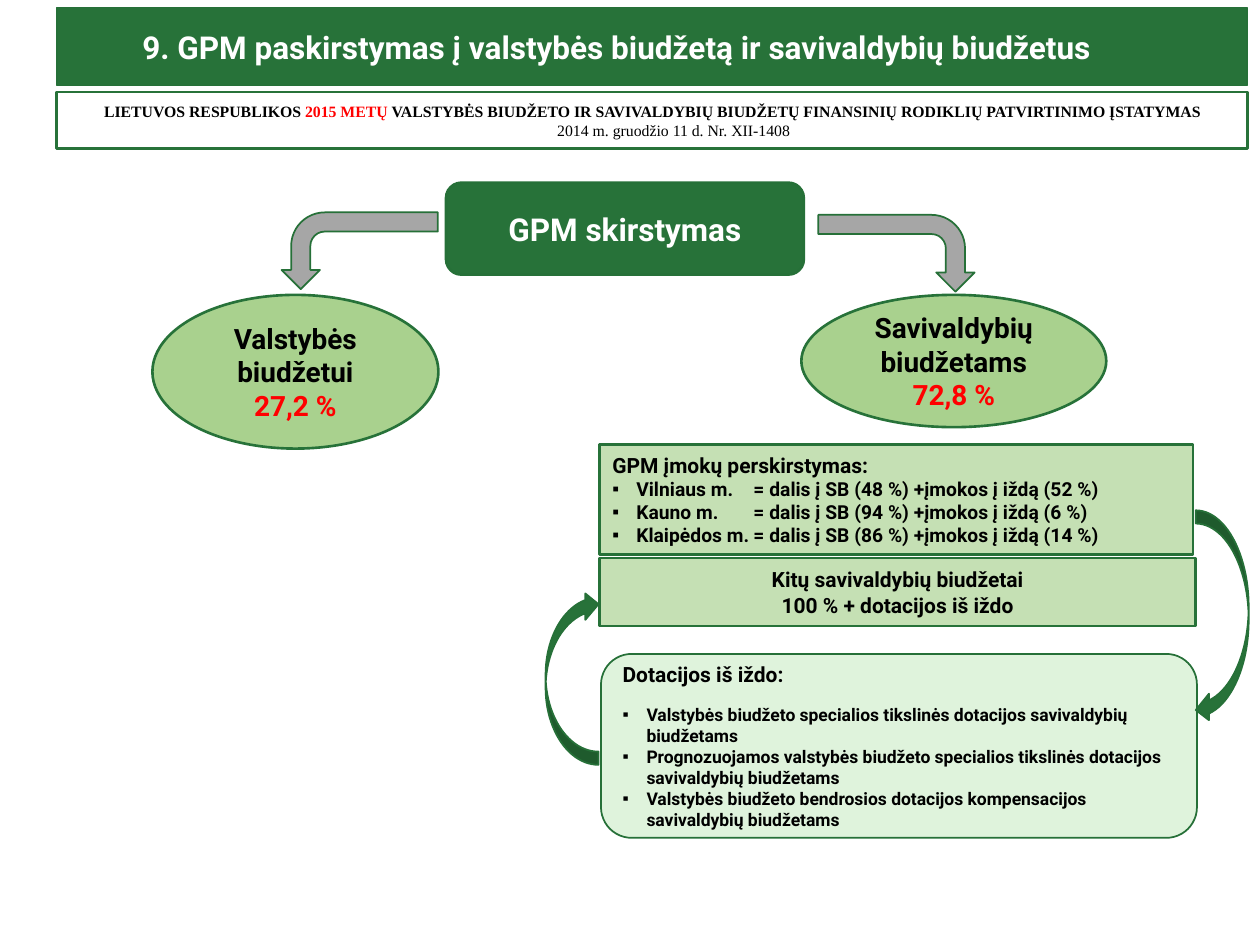
from dataclasses import dataclass
from typing import Optional

from lxml.etree import SubElement
from pptx import Presentation
from pptx.dml.color import RGBColor
from pptx.enum.shapes import MSO_SHAPE as Preset
from pptx.enum.text import MSO_ANCHOR as Anchor, MSO_AUTO_SIZE as AutoSize, PP_ALIGN as Align
from pptx.oxml.ns import qn
from pptx.util import Inches, Pt

# Grid: 100 columns by 75 rows
COLUMNS, ROWS = 100, 75
CELL = Inches(0.1)

GREEN = RGBColor(0x27, 0x72, 0x39)
EDGE = RGBColor(0x26, 0x70, 0x38)
LEAF = RGBColor(0xA9, 0xD1, 0x8E)
PALE = RGBColor(0xC5, 0xE0, 0xB4)
MINT = RGBColor(0xDF, 0xF3, 0xDC)
GREY = RGBColor(0xA6, 0xA6, 0xA6)
RED = RGBColor(0xFF, 0x00, 0x00)
BLACK = RGBColor(0x00, 0x00, 0x00)
WHITE = RGBColor(0xFF, 0xFF, 0xFF)
INDENT = Inches(0.19)


@dataclass
class Span:
    text: str
    size: float
    color: RGBColor = BLACK
    bold: bool = True
    font: str = "Roboto"


@dataclass
class Para:
    spans: list[Span]
    align: Align = Align.CENTER
    bullet: bool = False
    left: float = 0  # inches
    after: float = 0  # points
    tab: Optional[float] = None  # inches


@dataclass
class Area:
    column: float
    row: float
    columns: float
    rows: float

    def lengths(self) -> list[int]:
        return [round(n * CELL) for n in (self.column, self.row, self.columns, self.rows)]


@dataclass
class Look:
    fill: RGBColor
    line: RGBColor = GREEN
    width: float = 1.5


@dataclass
class Arrow:
    preset: Preset
    area: Area
    fill: RGBColor
    rotation: int = 0
    flipped: bool = False


def paint(shape, look: Look) -> None:
    shape.fill.solid()
    shape.fill.fore_color.rgb = look.fill
    shape.line.color.rgb = look.line
    shape.line.width = Pt(look.width)


def write(box, paras: list[Para]) -> None:
    frame = box.text_frame
    frame.word_wrap = True
    frame.auto_size = AutoSize.NONE
    frame.vertical_anchor = Anchor.MIDDLE
    for number, item in enumerate(paras):
        para = frame.add_paragraph() if number else frame.paragraphs[0]
        para.alignment = item.align
        para.space_before = Pt(0)
        para.space_after = Pt(item.after)
        props = para._p.get_or_add_pPr()
        props.set("marL", str(INDENT if item.bullet else Inches(item.left)))
        props.set("indent", str(-INDENT if item.bullet else 0))
        if item.bullet:
            SubElement(props, qn("a:buChar"), char="▪")
        else:
            SubElement(props, qn("a:buNone"))
        if item.tab:
            stops = SubElement(props, qn("a:tabLst"))
            SubElement(stops, qn("a:tab"), pos=str(Inches(item.tab)), algn="l")
        for part in item.spans:
            span = para.add_run()
            span.text = part.text
            span.font.name = part.font
            span.font.size = Pt(part.size)
            span.font.bold = part.bold
            span.font.color.rgb = part.color


def add_box(page, preset: Preset, area: Area, look: Look, paras: list[Para]) -> None:
    box = page.shapes.add_shape(preset, *area.lengths())
    box.shadow.inherit = False
    paint(box, look)
    write(box, paras)


def fill_placeholder(box, area: Area, look: Look, paras: list[Para],
                     outline: Optional[str] = None) -> None:
    box.left, box.top, box.width, box.height = area.lengths()
    if outline:
        SubElement(box.element.spPr, qn("a:prstGeom"), prst=outline)
    paint(box, look)
    write(box, paras)


def add_arrow(page, arrow: Arrow) -> None:
    shape = page.shapes.add_shape(arrow.preset, *arrow.area.lengths())
    shape.shadow.inherit = False
    shape.rotation = arrow.rotation
    if arrow.flipped:
        shape.element.spPr.xfrm.set("flipV", "1")
    paint(shape, Look(arrow.fill, EDGE, 1))


def listing(heading: str, items: list[str], size: float, gap: float = 0,
            tab: Optional[float] = None) -> list[Para]:
    head = Para([Span(heading, 12)], Align.LEFT, after=gap)
    return [head] + [Para([Span(item, size)], Align.LEFT, True, tab=tab) for item in items]


def serif(text: str, color: RGBColor = BLACK, bold: bool = True) -> Span:
    return Span(text, 9, color, bold, "Times New Roman")


def main() -> None:
    deck = Presentation()
    deck.slide_width, deck.slide_height = COLUMNS * CELL, ROWS * CELL
    page = deck.slides.add_slide(deck.slide_layouts[3])
    title, transfers, grants = page.placeholders

    # Title bar and the law it rests on
    fill_placeholder(title, Area(4.5, 0.6, 94.5, 6.2), Look(GREEN, EDGE, 1), [
        Para([Span("9. GPM paskirstymas į valstybės biudžetą ir savivaldybių biudžetus", 18, WHITE)])])
    title.text_frame.margin_right = Inches(0.66)
    add_box(page, Preset.RECTANGLE, Area(4.5, 7.3, 94.5, 4.5), Look(WHITE), [
        Para([serif("LIETUVOS RESPUBLIKOS "), serif("2015 METŲ ", RED),
              serif("VALSTYBĖS BIUDŽETO IR SAVIVALDYBIŲ BIUDŽETŲ FINANSINIŲ "
                    "RODIKLIŲ PATVIRTINIMO ĮSTATYMAS")]),
        Para([serif("2014 m. gruodžio 11 d. Nr. XII-1408", bold=False)], left=0.34)])

    # Split of the tax between the two budgets
    add_box(page, Preset.ROUNDED_RECTANGLE, Area(35.4, 14.5, 28.4, 7.3), Look(GREEN, EDGE),
            [Para([Span("GPM skirstymas", 18, WHITE)])])
    shares = [("Valstybės biudžetui", "27,2 %", Area(12.1, 23.4, 22.7, 12.2)),
              ("Savivaldybių biudžetams", "72,8 %", Area(63.6, 23.4, 24.2, 10.5))]
    for name, share, area in shares:
        add_box(page, Preset.OVAL, area, Look(LEAF),
                [Para([Span(name, 16)]), Para([Span(share, 16, RED)])])

    # Municipal budgets
    fill_placeholder(transfers, Area(47.6, 35.3, 47.1, 8.7), Look(PALE), listing(
        "GPM įmokų perskirstymas:",
        ["Vilniaus m.\t= dalis į SB (48 %) +įmokos į iždą (52 %)",
         "Kauno m.\t= dalis į SB (94 %) +įmokos į iždą (6 %)",
         "Klaipėdos m.\t= dalis į SB (86 %) +įmokos į iždą (14 %)"], 11, tab=1.12))
    add_box(page, Preset.RECTANGLE, Area(47.6, 44.3, 47.3, 5.4), Look(PALE), [
        Para([Span(line, 12)])
        for line in ("Kitų savivaldybių biudžetai", "100 % + dotacijos iš iždo")])

    # Grants from the treasury
    fill_placeholder(grants, Area(47.7, 51.9, 47.3, 14.6), Look(MINT, EDGE, 1), listing(
        "Dotacijos iš iždo:",
        ["Valstybės biudžeto specialios tikslinės dotacijos savivaldybių biudžetams",
         "Prognozuojamos valstybės biudžeto specialios tikslinės dotacijos savivaldybių biudžetams",
         "Valstybės biudžeto bendrosios dotacijos kompensacijos savivaldybių biudžetams"],
        10, gap=9.4), "flowChartAlternateProcess")
    grants.text_frame.margin_left = grants.text_frame.margin_right = Inches(0.1)

    # Flow arrows
    for arrow in (
        Arrow(Preset.BENT_ARROW, Area(25.5, 13.7, 6.1, 12.4), GREY, 90, True),
        Arrow(Preset.BENT_ARROW, Area(68.1, 13.9, 6.1, 12.4), GREY, 90),
        Arrow(Preset.CURVED_LEFT_ARROW, Area(94.9, 40.5, 4.2, 16.9), GREEN),
        Arrow(Preset.CURVED_LEFT_ARROW, Area(43.3, 46.9, 4.2, 13.8), GREEN, 180),
    ):
        add_arrow(page, arrow)

    deck.save("out.pptx")


if __name__ == "__main__":
    main()
